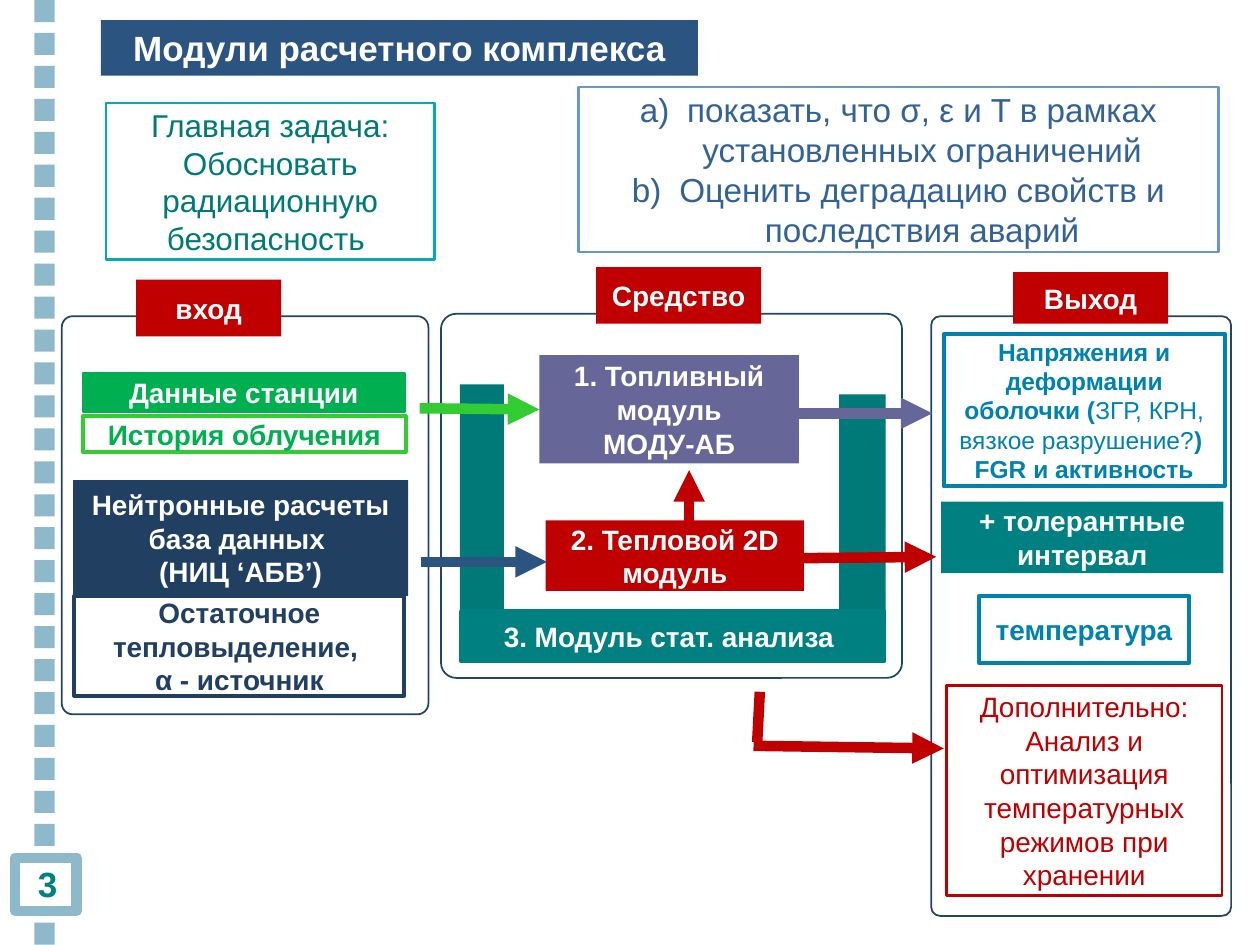
from lxml import etree
from pptx import Presentation
from pptx.dml.color import RGBColor
from pptx.enum.shapes import MSO_CONNECTOR, MSO_SHAPE
from pptx.enum.text import MSO_ANCHOR, PP_ALIGN
from pptx.oxml.ns import qn
from pptx.util import Pt

RECTANGLE, ROUNDED = MSO_SHAPE.RECTANGLE, MSO_SHAPE.ROUNDED_RECTANGLE
STRAIGHT = MSO_CONNECTOR.STRAIGHT
TOP, MIDDLE, BOTTOM = MSO_ANCHOR.TOP, MSO_ANCHOR.MIDDLE, MSO_ANCHOR.BOTTOM
CENTER = PP_ALIGN.CENTER

WHITE = RGBColor(0xFF, 0xFF, 0xFF)
PALE_BLUE = RGBColor(0x8D, 0xB9, 0xCB)
TEAL = RGBColor(0x00, 0x80, 0x80)
DARK_TEAL = RGBColor(0x00, 0x79, 0x79)
CYAN = RGBColor(0x02, 0xA8, 0xBE)
TITLE_BLUE = RGBColor(0x2B, 0x54, 0x81)
NAVY = RGBColor(0x20, 0x3F, 0x61)
FRAME_BLUE = RGBColor(0x22, 0x45, 0x67)
GREEN = RGBColor(0x00, 0xB0, 0x50)
LIME = RGBColor(0x33, 0xCC, 0x33)
RED = RGBColor(0xC0, 0x00, 0x00)
VIOLET = RGBColor(0x66, 0x66, 0x99)
OUTPUT_BLUE = RGBColor(0x00, 0x82, 0xB0)
GOAL_LINE = RGBColor(0x67, 0x97, 0xCC)
GOAL_TEXT = RGBColor(0x33, 0x62, 0x95)


def add_box(page, place, fill=None, line=None, width=1.5, preset=RECTANGLE):
    """Add a shape at (left, top, width, height) with optional fill and line."""
    box = page.shapes.add_shape(preset, *map(Pt, place))
    box.shadow.inherit = False
    if fill is None:
        box.fill.background()
    else:
        box.fill.solid()
        box.fill.fore_color.rgb = fill
    if line is None:
        box.line.fill.background()
    else:
        box.line.color.rgb = line
        box.line.width = Pt(width)
    return box


def write(box, lines, color, size=16, bold=True, anchor=MIDDLE):
    """Write centred paragraphs; a "|" within a line switches bold over."""
    frame = box.text_frame
    frame.word_wrap = True
    frame.vertical_anchor = anchor
    for index, line in enumerate(lines):
        para = frame.add_paragraph() if index else frame.paragraphs[0]
        para.alignment = CENTER
        first, *others = line.split("|")
        para.text = first
        for text in others:
            para.add_run().text = text
        for turn, span in enumerate(para.runs):
            span.font.name = "Arial"
            span.font.size = Pt(size)
            span.font.bold = bold if turn % 2 == 0 else not bold
            span.font.color.rgb = color


def add_frame(page, place, rounding):
    """Add the rounded outline of a column."""
    frame = add_box(page, place, line=FRAME_BLUE, width=1, preset=ROUNDED)
    frame.adjustments[0] = rounding


def add_line(page, start, end, color, arrow=True):
    """Add a thick line, by default with an arrowhead at its end."""
    line = page.shapes.add_connector(STRAIGHT, *map(Pt, start + end))
    line.line.color.rgb = color
    line.line.width = Pt(6)
    properties = line._element.spPr
    if arrow:
        etree.SubElement(properties.find(qn("a:ln")), qn("a:tailEnd"), type="triangle")
    etree.SubElement(properties, qn("a:effectLst"))


def add_letters(box):
    """Number the paragraphs of a box a), b) with a hanging indent."""
    for para in box.text_frame.paragraphs:
        properties = para._p.get_or_add_pPr()
        properties.set("marL", str(Pt(27)))
        properties.set("indent", str(-Pt(27)))
        etree.SubElement(properties, qn("a:buFont"), typeface="Arial")
        etree.SubElement(properties, qn("a:buAutoNum"), type="alphaLcParenR")


def add_side_strip(page):
    """Draw the dashed strip and the page number that interrupts it."""
    for step in [*range(26), 28]:
        add_box(page, (19.7, step * 18.83, 11.5, 12.6), PALE_BLUE)
    add_box(page, (8.6, 490.3, 35.3, 30.2), line=PALE_BLUE, width=6)
    number = page.shapes.add_textbox(Pt(-5.8), Pt(488.9), Pt(66.2), Pt(37.4))
    number.text_frame.margin_bottom = Pt(9.4)
    number.text_frame.margin_top = Pt(6.5)
    write(number, ["3"], TEAL, 20, anchor=BOTTOM)


def add_heading(page):
    """Draw the title, the main task and the goals."""
    title = add_box(page, (57.6, 11.5, 341.3, 31.7), TITLE_BLUE)
    write(title, ["Модули расчетного комплекса"], WHITE, 20, anchor=TOP)
    task = add_box(page, (60.5, 59, 187.9, 89.3), line=CYAN)
    write(task, ["Главная задача:", "Обосновать радиационную безопасность "],
          DARK_TEAL, 18, False)
    goals = add_box(page, (330.5, 49.7, 365.8, 94.3), line=GOAL_LINE)
    write(goals, ["показать, что σ, ε и T в рамках установленных ограничений",
                  "Оценить деградацию свойств и последствия аварий"],
          GOAL_TEXT, 19, False)
    add_letters(goals)


def add_inputs(page):
    """Draw the input column."""
    station = add_box(page, (47.5, 213.1, 183.6, 22.3), GREEN, GREEN)
    write(station, ["Данные станции"], WHITE)
    neutrons = add_box(page, (41.8, 274.3, 191.5, 66.2), NAVY)
    write(neutrons, ["Нейтронные расчеты база данных ", "(НИЦ ‘АБВ’)"], WHITE)
    heat = add_box(page, (42.5, 340.6, 188.6, 56.9), WHITE, NAVY, 2.25)
    write(heat, ["Остаточное тепловыделение, ", "α - источник"], NAVY)
    history = add_box(page, (47.5, 237.6, 184.3, 20.9), WHITE, LIME, 2.25)
    write(history, ["История облучения"], GREEN)
    add_frame(page, (35.3, 180.7, 209.5, 227.5), 0.03)
    label = add_box(page, (77.8, 159.8, 82.8, 32.4), RED)
    write(label, ["вход"], WHITE)


def add_tools(page):
    """Draw the column of calculation modules."""
    add_box(page, (479.5, 225.4, 26.6, 123.1), DARK_TEAL)
    add_box(page, (262.8, 219.6, 25.2, 128.9), DARK_TEAL)
    add_frame(page, (252, 179.3, 263.5, 208.1), 0.042)
    statistics = add_box(page, (263.5, 349.2, 241.9, 28.8), TEAL, TEAL, 2.25)
    write(statistics, ["3. Модуль стат. анализа "], WHITE)
    fuel = add_box(page, (308.2, 203, 148.3, 61.9), VIOLET)
    write(fuel, ["1. Топливный модуль", "МОДУ-АБ"], WHITE)
    thermal = add_box(page, (311.8, 297.4, 147.6, 40.3), RED)
    write(thermal, ["2. Тепловой 2D модуль"], WHITE)
    add_line(page, (239.8, 233.3), (308.2, 234), LIME)
    add_line(page, (240.5, 321.1), (312.5, 321.1), TITLE_BLUE)
    label = add_box(page, (340.6, 152.6, 94.3, 32.4), RED)
    write(label, ["Средство"], WHITE)
    add_line(page, (393.8, 298.8), (393.8, 268.6), RED)


def add_outputs(page):
    """Draw the output column and the arrows leading to it."""
    add_frame(page, (532.1, 180.7, 171.4, 342.7), 0.03)
    add_line(page, (432.7, 424.1), (434.2, 395.3), RED, arrow=False)
    extra = add_box(page, (540.7, 391.7, 157.7, 120.2), line=RED)
    write(extra, ["Дополнительно:",
                  "Анализ и оптимизация температурных режимов при хранении"],
          RED, bold=False)
    stress = add_box(page, (539.3, 190.8, 160.6, 87.1), WHITE, OUTPUT_BLUE, 2.25)
    write(stress, ["Напряжения и деформации оболочки (|ЗГР, КРН, вязкое разрушение?|) ",
                   "FGR и активность"], OUTPUT_BLUE, 14)
    temperature = add_box(page, (559.4, 340.6, 120.2, 38.2), WHITE, OUTPUT_BLUE, 2.25)
    write(temperature, ["температура"], OUTPUT_BLUE)
    add_line(page, (455, 319), (535, 318.2), RED)
    add_line(page, (430.6, 426.2), (539.3, 427.7), RED)
    add_line(page, (453.6, 236.2), (532.8, 236.2), VIOLET)
    label = add_box(page, (578.9, 155.5, 88.6, 29.5), RED)
    write(label, ["Выход"], WHITE)
    interval = add_box(page, (537.8, 286.6, 161.3, 41), TEAL)
    write(interval, ["+ толерантные интервал"], WHITE)


def main():
    """Build the slide and save it."""
    deck = Presentation()
    deck.slide_width, deck.slide_height = Pt(720), Pt(540)
    page = deck.slides.add_slide(deck.slide_layouts[6])
    add_side_strip(page)
    add_heading(page)
    add_inputs(page)
    add_tools(page)
    add_outputs(page)
    deck.save("out.pptx")


if __name__ == "__main__":
    main()
